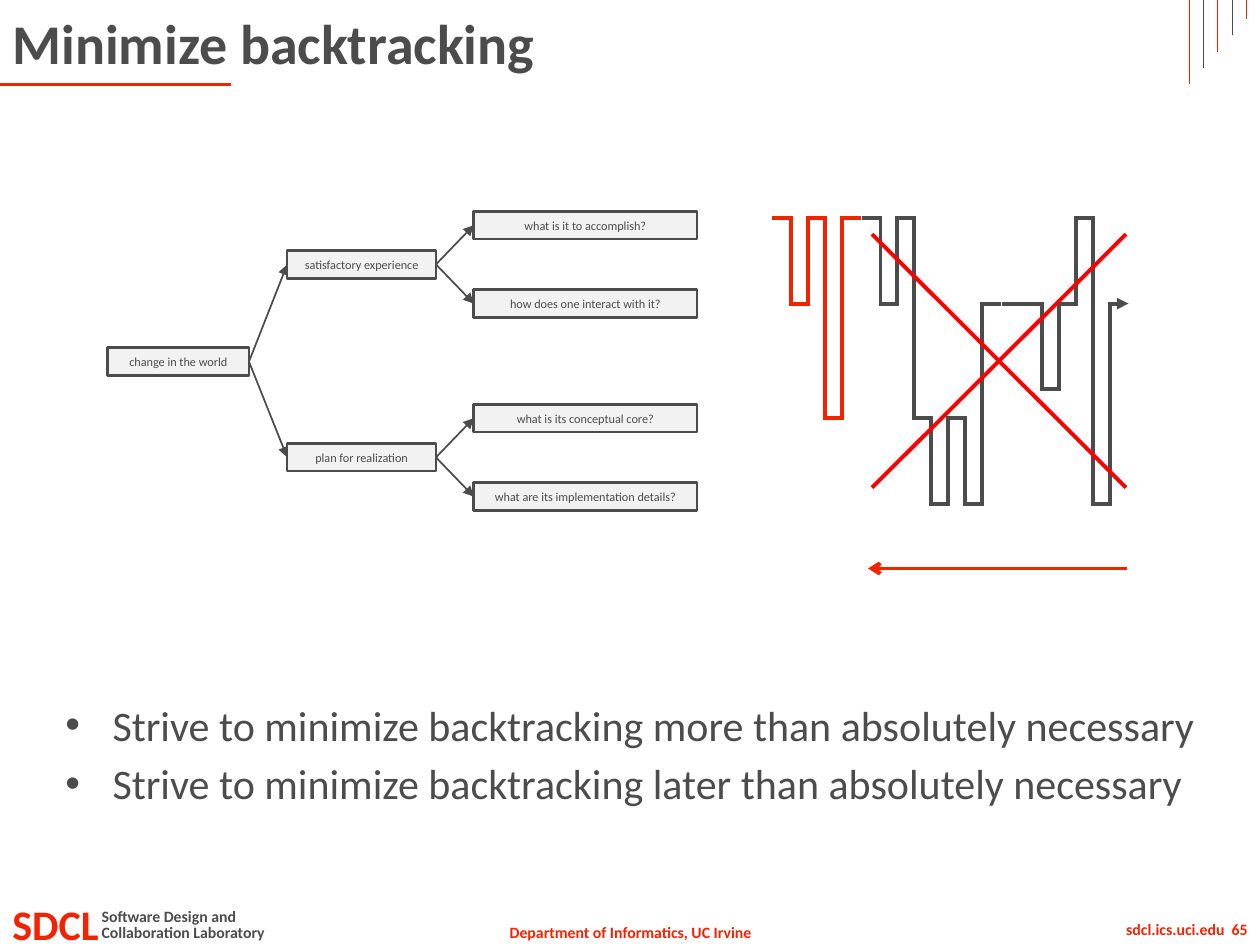
from lxml.etree import SubElement
from pptx import Presentation
from pptx.dml.color import RGBColor
from pptx.enum.shapes import MSO_CONNECTOR as CONN, MSO_SHAPE as SHAPE
from pptx.enum.text import MSO_ANCHOR as ANCHOR, PP_ALIGN as ALIGN
from pptx.oxml.ns import qn
from pptx.util import Cm, Pt

RED, DARK = "F32200", "4C4C4C"

prs = Presentation()
prs.slide_width, prs.slide_height = Cm(25.4), Cm(19.05)
s = prs.slides.add_slide(prs.slide_layouts[6])


def write(sp, lines, size, color=DARK, bold=False, align=ALIGN.LEFT,
          anchor=ANCHOR.TOP, wrap=True):
    tf = sp.text_frame
    tf.word_wrap = wrap
    tf.vertical_anchor = anchor
    for i, line in enumerate(lines):
        p = tf.add_paragraph() if i else tf.paragraphs[0]
        p.alignment = align
        r = p.add_run()
        r.text = line
        r.font.name = "Calibri"
        r.font.size = Pt(size)
        r.font.bold = bold
        r.font.color.rgb = RGBColor.from_string(color)
    return tf


def add_line(x1, y1, x2, y2, color, width, tail=None):
    c = s.shapes.add_connector(CONN.STRAIGHT, Cm(x1), Cm(y1), Cm(x2), Cm(y2))
    c.line.color.rgb = RGBColor.from_string(color)
    c.line.width = Pt(width)
    if tail:
        SubElement(c.line._get_or_add_ln(), qn("a:tailEnd"), type=tail)
    SubElement(c._element.spPr, qn("a:effectLst"))


footer = [
    ("Department of Informatics, UC Irvine", 9.98, 18.47, 5.46, 9, RED, ALIGN.CENTER, False),
    ("SDCL", 0, 17.98, 2.54, 24, RED, ALIGN.LEFT, True),
    ("Collaboration Laboratory", 1.8, 18.47, 3.89, 9, DARK, ALIGN.LEFT, False),
    ("Software Design and", 1.8, 18.16, 3.28, 9, DARK, ALIGN.LEFT, False),
    ("sdcl.ics.uci.edu  65", 19.91, 18.42, 5.49, 9, RED, ALIGN.RIGHT, True),
]
for text, x, y, w, size, color, align, wrap in footer:
    sp = s.shapes.add_textbox(Cm(x), Cm(y), Cm(w), Cm(1.27 if size > 9 else 0.64))
    write(sp, [text], size, color, True, align, wrap=wrap)

add_line(0, 1.7, 4.65, 1.7, RED, 1.5)
for i in range(5):
    x = 23.98 + 0.285 * i
    add_line(x, 1.7 - 0.33 * i, x, 0, DARK if i % 2 else RED, 0.5)

sp = s.shapes.add_textbox(0, 0, Cm(22.86), Cm(1.7))
write(sp, ["Minimize backtracking"], 32, bold=True, anchor=ANCHOR.MIDDLE)

root_y, root_end, mid_x, mid_end, leaf_x = 7.29, 5.02, 5.79, 8.79, 9.55
boxes = [("change in the world", 2.17, root_y, 2.85)]
branches = [
    ("satisfactory experience", 5.33,
     ["what is it to accomplish?", "how does one interact with it?"]),
    ("plan for realization", 9.22,
     ["what is its conceptual core?", "what are its implementation details?"]),
]
for text, y, leaves in branches:
    boxes.append((text, mid_x, y, 3))
    add_line(root_end, root_y, mid_x, y, DARK, 1, "triangle")
    for leaf, leaf_y in zip(leaves, (y - 0.79, y + 0.79)):
        boxes.append((leaf, leaf_x, leaf_y, 4.5))
        add_line(mid_end, y, leaf_x, leaf_y, DARK, 1, "triangle")
for text, x, y, w in boxes:
    sp = s.shapes.add_shape(SHAPE.RECTANGLE, Cm(x), Cm(y - 0.28), Cm(w), Cm(0.56))
    sp.shadow.inherit = False
    sp.fill.solid()
    sp.fill.fore_color.rgb = RGBColor.from_string("F2F2F2")
    sp.line.color.rgb = RGBColor.from_string(DARK)
    sp.line.width = Pt(1.5)
    write(sp, [text], 7, align=ALIGN.CENTER, anchor=ANCHOR.MIDDLE)

top, mid, dip, low, bottom = 4.39, 6.12, 7.85, 8.43, 10.16
step, overlap = 0.34, 0.04
traces = [
    (RED, 15.95, [top, mid, top, low, top], None),
    (DARK, 17.75, [top, mid, top, low, bottom, low, bottom, mid], None),
    (DARK, 21.01, [mid, dip, mid, top, bottom, mid], "triangle"),
]
for color, start, levels, tail in traces:
    for i, y in enumerate(levels):
        x = start + i * step
        last = i == len(levels) - 1
        add_line(x - step - overlap, y, x + overlap, y, color, 2.25, tail if last else None)
        if not last:
            add_line(x, y, x, levels[i + 1], color, 2.25)
add_line(20.2, mid, 20.65, mid, DARK, 2.25)

add_line(22.71, 11.46, 17.5, 11.46, RED, 2.25, "arrow")
for y1, y2 in ((4.72, 9.83), (9.83, 4.72)):
    add_line(17.58, y1, 22.7, y2, "FF0000", 2.25)

sp = s.shapes.add_textbox(Cm(1.07), Cm(13.97), Cm(23.29), Cm(3.48))
tf = write(sp, [f"Strive to minimize backtracking {when} than absolutely necessary"
                for when in ("more", "later")], 24)
for p in tf.paragraphs:
    p.space_before = Pt(4.8)
    pPr = p._p.get_or_add_pPr()
    pPr.set("marL", str(Cm(0.95)))
    pPr.set("indent", str(Cm(-0.95)))
    SubElement(pPr, qn("a:buFont"), typeface="Arial")
    SubElement(pPr, qn("a:buChar"), char="•")

prs.save("out.pptx")
